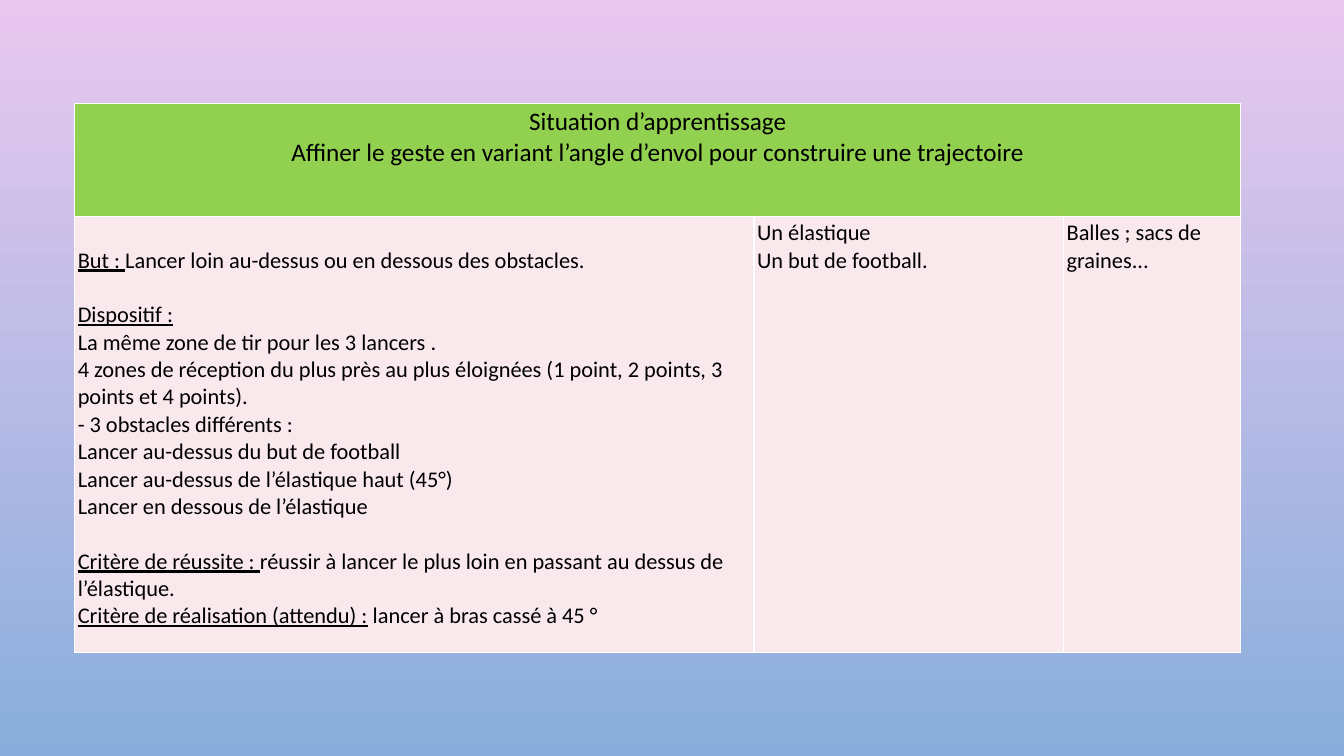
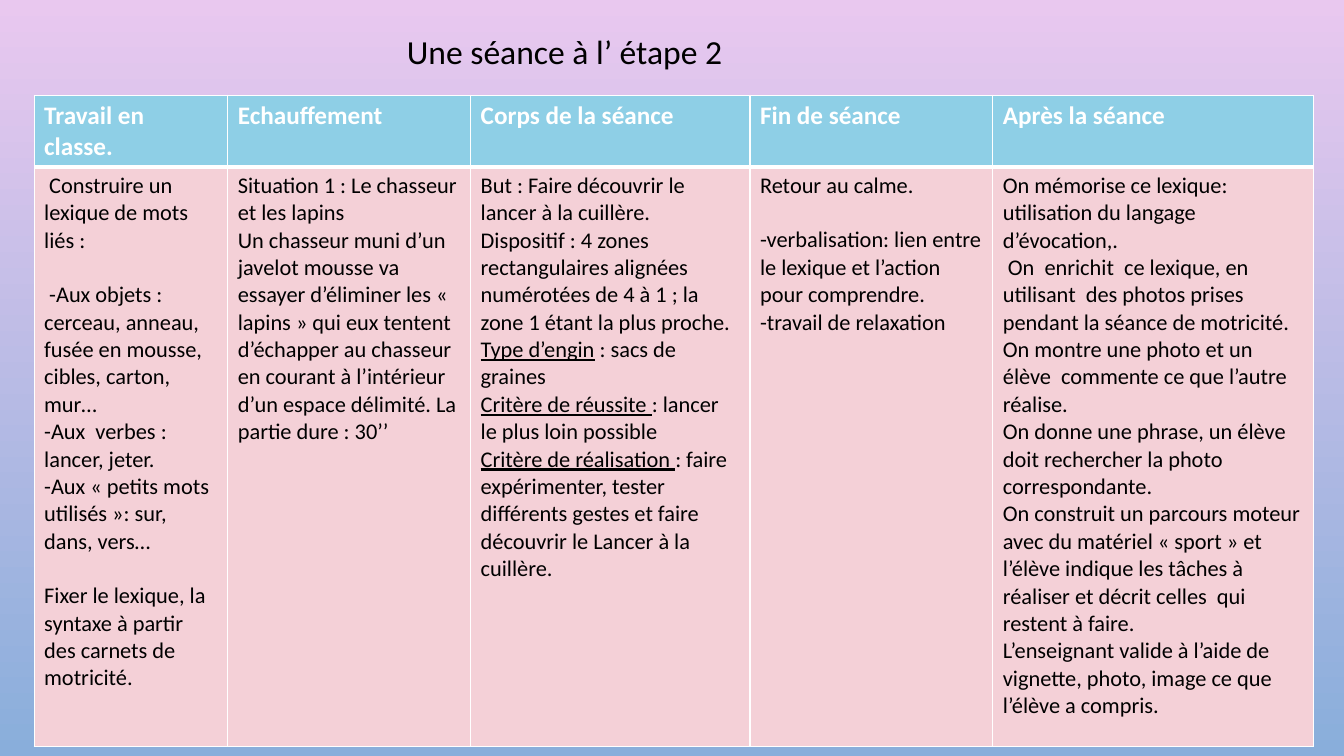
from lxml.etree import SubElement
from pptx import Presentation
from pptx.dml.color import RGBColor
from pptx.enum.text import MSO_ANCHOR, MSO_AUTO_SIZE, PP_ALIGN
from pptx.oxml.ns import qn
from pptx.util import Cm, Pt

FONT = "Calibri"
BLACK, WHITE = "000000", "FFFFFF"
SKY_TOP, SKY_BOTTOM = "E9C8EF", "89AEDB"
GREEN, BLUE = "92D050", "8ECFE6"
PALE_PINK, PINK = "FAE9EC", "F4D0D7"
TITLE_ONLY, BLANK = 5, 6
BLOCK_GAP = 19.5  # points, one line of body text

# A cell holds blocks of paragraphs, with a gap between blocks.
# A paragraph is a string or a pair (underlined label, plain text).
SITUATION_HEADING = [[
    "Situation d’apprentissage",
    "Affiner le geste en variant l’angle d’envol pour construire une trajectoire",
]]
SITUATION = [
    [
        [("But : ", "Lancer loin au-dessus ou en dessous des obstacles.")],
        [
            ("Dispositif :", ""),
            "La même zone de tir pour les 3 lancers .",
            "4 zones de réception du plus près au plus éloignées "
            "(1 point, 2 points, 3 points et 4 points).",
            "- 3 obstacles différents :",
            "Lancer au-dessus du but de football",
            "Lancer au-dessus de l’élastique haut (45°)",
            "Lancer en dessous de l’élastique",
        ],
        [
            ("Critère de réussite : ",
             "réussir à lancer le plus loin en passant au dessus de l’élastique."),
            ("Critère de réalisation (attendu) :", " lancer à bras cassé à 45 °"),
        ],
    ],
    [["Un élastique", "Un but de football."]],
    [["Balles ; sacs de graines..."]],
]

SESSION = {
    "Travail en classe.": [
        [" Construire un lexique de mots liés :"],
        [
            " -Aux objets : cerceau, anneau, fusée en mousse, cibles, carton, mur…",
            "-Aux  verbes : lancer, jeter.",
            "-Aux « petits mots utilisés »: sur, dans, vers…",
        ],
        ["Fixer le lexique, la syntaxe à partir  des carnets de motricité."],
    ],
    "Echauffement": [[
        "Situation 1 : Le chasseur et les lapins",
        "Un chasseur muni d’un javelot mousse va essayer d’éliminer les "
        "« lapins » qui eux tentent d’échapper au chasseur en courant à "
        "l’intérieur d’un espace délimité. La partie dure : 30’’",
    ]],
    "Corps de la séance": [[
        "But : Faire découvrir le lancer à la cuillère.",
        "Dispositif : 4 zones rectangulaires alignées numérotées de 4 à 1 ; "
        "la zone 1 étant la plus proche.",
        ("Type d’engin", " : sacs de graines"),
        ("Critère de réussite ", ": lancer le plus loin possible"),
        ("Critère de réalisation ",
         ": faire expérimenter, tester différents gestes et faire découvrir "
         "le Lancer à la cuillère."),
    ]],
    "Fin de séance": [
        ["Retour au calme."],
        [
            "-verbalisation: lien entre le lexique et l’action pour comprendre.",
            "-travail de relaxation",
        ],
    ],
    "Après la séance": [[
        "On mémorise ce lexique: utilisation du langage d’évocation,.",
        " On  enrichit  ce lexique, en utilisant  des photos prises pendant "
        "la séance de motricité.",
        "On montre une photo et un élève  commente ce que l’autre réalise.",
        "On donne une phrase, un élève doit rechercher la photo correspondante.",
        "On construit un parcours moteur avec du matériel « sport » et l’élève "
        "indique les tâches à réaliser et décrit celles  qui restent à faire.",
        "L’enseignant valide à l’aide de vignette, photo, image ce que "
        "l’élève a compris.",
    ]],
}


def rgb(hex_color):
    return RGBColor.from_string(hex_color)


def write(frame, blocks, size=16, color=BLACK, bold=False, align=PP_ALIGN.LEFT):
    """Fill a text frame with blocks of plain or labelled paragraphs."""
    paragraph = None
    for block in blocks:
        for index, content in enumerate(block):
            is_first = paragraph is None
            paragraph = frame.paragraphs[0] if is_first else frame.add_paragraph()
            paragraph.alignment = align
            if index == 0 and not is_first:
                paragraph.space_before = Pt(BLOCK_GAP)
            label, plain = ("", content) if isinstance(content, str) else content
            for text, underlined in ((label, True), (plain, False)):
                if text:
                    run = paragraph.add_run()
                    run.text = text
                    font = run.font
                    font.name, font.size = FONT, Pt(size)
                    font.bold, font.underline = bold, underlined
                    font.color.rgb = rgb(color)


def add_borders(cell, bottom):
    properties = cell._tc.get_or_add_tcPr()
    widths = {"a:lnL": 1, "a:lnR": 1, "a:lnT": 1, "a:lnB": bottom}
    for index, (side, width) in enumerate(widths.items()):
        line = SubElement(properties, qn(side), w=str(Pt(width)))
        fill = SubElement(line, qn("a:solidFill"))
        SubElement(fill, qn("a:srgbClr"), val=WHITE)
        properties.insert(index, line)


def style_row(row, fill, bottom=1, inset=None):
    for cell in row.cells:
        cell.fill.solid()
        cell.fill.fore_color.rgb = rgb(fill)
        add_borders(cell, bottom)
        if inset is not None:
            cell.margin_left = cell.margin_right = Cm(inset)
            cell.margin_top = cell.margin_bottom = Cm(inset)


def add_grid(slide, left, top, widths, heights):
    """Add an unbanded table whose sizes are given in centimetres."""
    table = slide.shapes.add_table(
        len(heights), len(widths), Cm(left), Cm(top),
        Cm(sum(widths)), Cm(sum(heights))).table
    table.horz_banding = False
    for column, width in zip(table.columns, widths):
        column.width = Cm(width)
    for row, height in zip(table.rows, heights):
        row.height = Cm(height)
    return table


def place_title(slide, text, left, top, width, height):
    title = slide.shapes.title
    title.left, title.top = Cm(left), Cm(top)
    title.width, title.height = Cm(width), Cm(height)
    frame = title.text_frame
    frame.word_wrap = False
    frame.auto_size = MSO_AUTO_SIZE.NONE
    frame.vertical_anchor = MSO_ANCHOR.TOP
    write(frame, [[text]], size=24)


def set_background(master):
    fill = master.background.fill
    fill.gradient()
    fill.gradient_angle = 270
    for stop, color in zip(fill.gradient_stops, (SKY_TOP, SKY_BOTTOM)):
        stop.color.rgb = rgb(color)


def build_situation(slide):
    table = add_grid(slide, 1.88, 2.6, (17.12, 7.8, 4.47), (2.85, 11))
    inset = 0.08
    style_row(table.rows[0], GREEN, inset=inset)
    style_row(table.rows[1], PALE_PINK, inset=inset)
    heading = table.cell(0, 0)
    heading.merge(table.cell(0, 2))
    write(heading.text_frame, SITUATION_HEADING, size=18, align=PP_ALIGN.CENTER)
    for cell, blocks in zip(table.rows[1].cells, SITUATION):
        write(cell.text_frame, blocks)
    table.cell(1, 0).margin_top = Cm(inset) + Pt(BLOCK_GAP)


def build_session(slide):
    place_title(slide, "Une séance à l’ étape 2", 10, 0.66, 8.7, 1.27)
    table = add_grid(slide, 0.86, 2.4, (4.88, 6.12, 7.04, 6.12, 8.08), (1.78, 14.6))
    style_row(table.rows[0], BLUE, bottom=3)
    style_row(table.rows[1], PINK)
    for column, (heading, blocks) in enumerate(SESSION.items()):
        write(table.cell(0, column).text_frame, [[heading]],
              size=18, color=WHITE, bold=True)
        write(table.cell(1, column).text_frame, blocks)


def main():
    deck = Presentation()
    deck.slide_width, deck.slide_height = Cm(33.87), Cm(19.05)
    set_background(deck.slide_master)
    build_situation(deck.slides.add_slide(deck.slide_layouts[BLANK]))
    build_session(deck.slides.add_slide(deck.slide_layouts[TITLE_ONLY]))
    deck.save("out.pptx")


if __name__ == "__main__":
    main()
